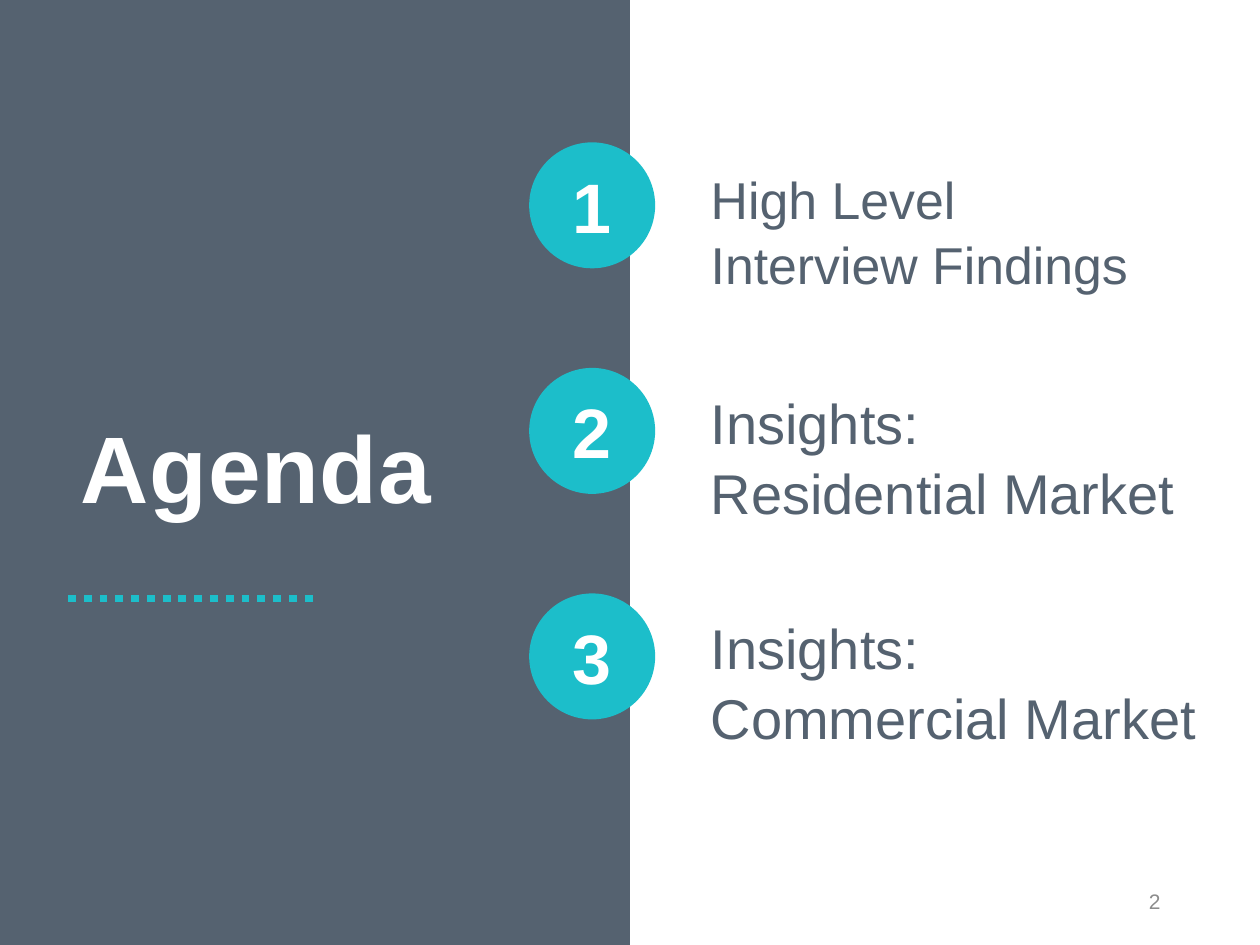
from pptx import Presentation
from pptx.dml.color import RGBColor
from pptx.enum import dml, shapes as sh, text as tx
from pptx.oxml import ns
from pptx.util import Inches, Pt
from lxml import etree

SLATE = RGBColor(0x55, 0x62, 0x70)
TEAL = RGBColor(0x1C, 0xBE, 0xCA)
WHITE = RGBColor(0xFF, 0xFF, 0xFF)
GRAY = RGBColor(0x8C, 0x8C, 0x8C)
LEFT, MID, RIGHT = tx.PP_ALIGN.LEFT, tx.PP_ALIGN.CENTER, tx.PP_ALIGN.RIGHT
CENTER, BOTTOM = tx.MSO_ANCHOR.MIDDLE, tx.MSO_ANCHOR.BOTTOM
ITEMS = [
    ("High Level Interview Findings", 29.6, 3.77, 1.13, 1.39),
    ("Insights: Residential Market", 32, 3.99, 3.07, 1.09),
    ("Insights: Commercial Market", 32, 4.16, 4.71, 1.39),
]


def place(shape, left, top, width, height):
    """Move and size a shape, in inches."""
    shape.left, shape.top = Inches(left), Inches(top)
    shape.width, shape.height = Inches(width), Inches(height)


def write(shape, words, size, color, bold=False, align=LEFT, anchor=CENTER,
          line=None, before=0, after=0, track=0):
    """Fill a shape with one formatted paragraph and return it."""
    frame = shape.text_frame
    frame.word_wrap = True
    frame.auto_size = tx.MSO_AUTO_SIZE.NONE
    frame.vertical_anchor = anchor
    para = frame.paragraphs[0]
    para.alignment, para.line_spacing = align, line
    para.space_before, para.space_after = Pt(before), Pt(after)
    run = para.add_run()
    run.text = words
    font = run.font
    font.name, font.size, font.bold = "Arial", Pt(size), bold
    font.color.rgb = color
    if track:
        font._element.set("spc", str(int(track * 100)))
    return para


def form(slide, kind, color, left, top, width, height):
    """Add a plain filled shape."""
    shape = slide.shapes.add_shape(
        kind, Inches(left), Inches(top), Inches(width), Inches(height))
    shape.shadow.inherit = False
    shape.fill.solid()
    shape.fill.fore_color.rgb = color
    shape.line.fill.background()
    return shape


def panel(slide, left, top, width, height):
    """Draw the dark side panel with its title and dotted rule."""
    back = form(slide, sh.MSO_SHAPE.RECTANGLE, SLATE, left, top, width, height)
    slide.shapes._spTree.insert(2, back._element)
    title = slide.shapes.title
    place(title, left + 0.54, top + 3.28, 3.99, 0.93)
    write(title, "Agenda", 54, WHITE, bold=True, anchor=BOTTOM, line=0.9,
          track=0.5)
    y = Inches(top + 4.75)
    rule = slide.shapes.add_connector(
        sh.MSO_CONNECTOR.STRAIGHT, Inches(left + 0.54), y,
        Inches(left + 2.52), y)
    rule.line.color.rgb, rule.line.width = TEAL, Pt(4.5)
    rule.line.dash_style = dml.MSO_LINE.ROUND_DOT
    etree.SubElement(rule._element.spPr, ns.qn("a:effectLst"))


def agenda(slide, left, top, step):
    """Place the numbered discs and the text beside each."""
    for i, (words, size, width, y, height) in enumerate(ITEMS):
        body = slide.placeholders[i + 1]
        place(body, left + 1.34, y, width, height)
        para = write(body, words, size, SLATE, line=1.04, before=10, after=6)
        props = para._p.get_or_add_pPr()
        props.set("marL", "0")
        props.set("indent", "0")
        etree.SubElement(props, ns.qn("a:buNone"))
        disc = form(slide, sh.MSO_SHAPE.OVAL, TEAL, left, top + i * step, 1, 1)
        write(disc, str(i + 1), 40, WHITE, bold=True, align=MID)


def footer(slide, left, top, width, height):
    """Write the page number."""
    box = slide.shapes.add_textbox(
        Inches(left), Inches(top), Inches(width), Inches(height))
    write(box, "2", 12, GRAY, align=RIGHT)


def main():
    """Build and save the agenda slide."""
    deck = Presentation()
    deck.slide_width, deck.slide_height = Inches(10), Inches(7.5)
    slide = deck.slides.add_slide(deck.slide_layouts[4])
    spare = slide.placeholders[4]._element
    spare.getparent().remove(spare)
    panel(slide, 0, 0, 5, 7.5)
    agenda(slide, 4.2, 1.13, 1.79)
    footer(slide, 7.06, 6.95, 2.25, 0.4)
    deck.save("out.pptx")


if __name__ == "__main__":
    main()
